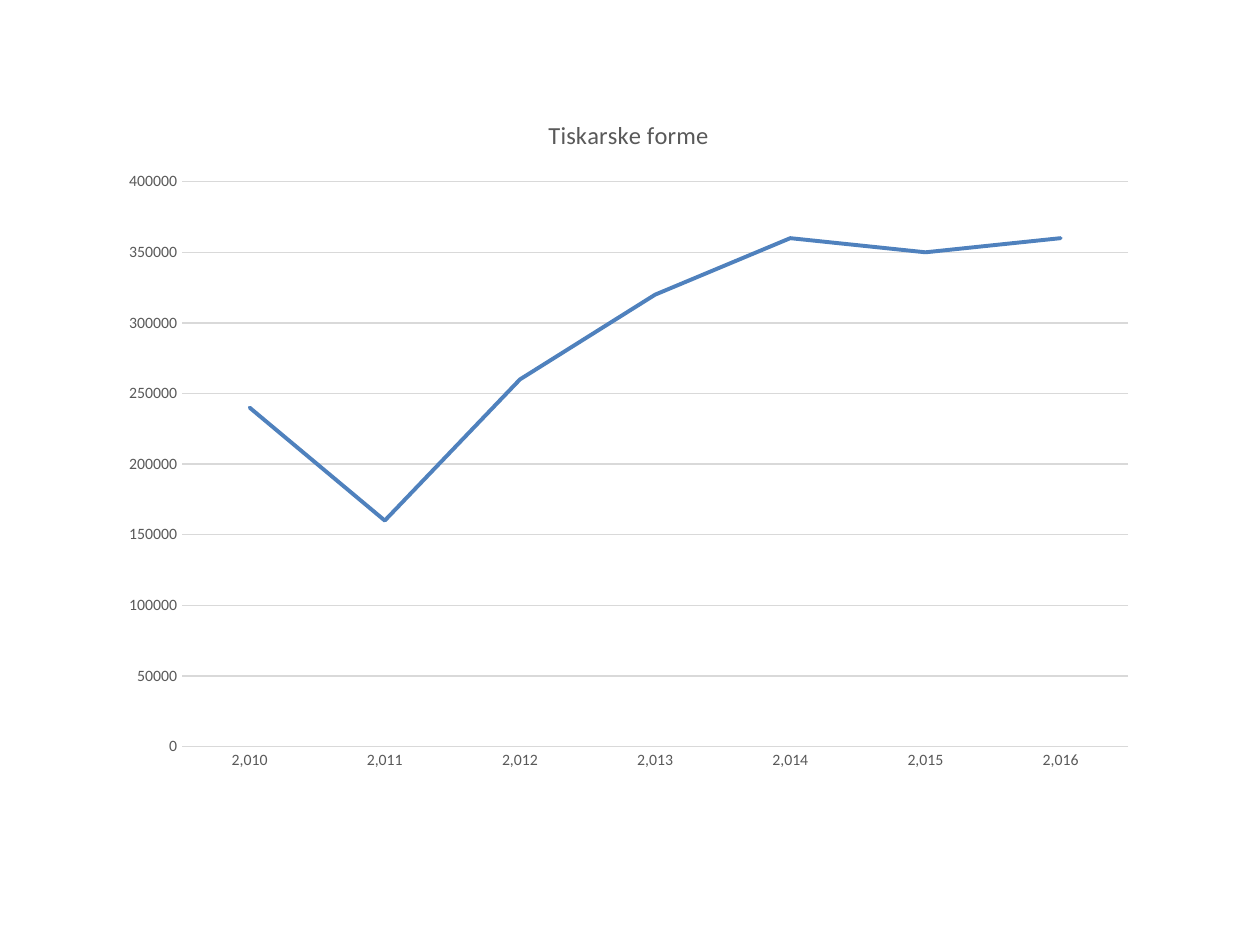
"""Build a slide with a line chart of printing plates per year."""
from pptx import Presentation
from pptx.chart.data import CategoryChartData
from pptx.dml.color import RGBColor
from pptx.enum import chart as ch
from pptx.util import Inches, Pt

TITLE = "Tiskarske forme"
PLATES = {
    "2,010": 240000,
    "2,011": 160000,
    "2,012": 260000,
    "2,013": 320000,
    "2,014": 360000,
    "2,015": 350000,
    "2,016": 360000,
}
GREY, GRID, BLUE = "595959", "D9D9D9", "4F81BD"


def rgb(color):
    return RGBColor.from_string(color)


def set_font(font, size, color=GREY):
    font.name, font.size, font.bold = "Calibri", Pt(size), False
    font.color.rgb = rgb(color)


def set_line(line, color, width):
    line.color.rgb = rgb(color)
    line.width = Pt(width)


def add_title(chart, content, size, color=GREY):
    chart.has_title = True
    chart.chart_title.include_in_layout = False
    p = chart.chart_title.text_frame.paragraphs[0]
    r = p.add_run()
    r.text = content
    set_font(r.font, size, color)


def style_axis(axis):
    axis.major_tick_mark = axis.minor_tick_mark = ch.XL_TICK_MARK.NONE
    set_font(axis.tick_labels.font, 9)


def add_line_chart(s):
    data = CategoryChartData(number_format="0")
    data.categories = list(PLATES)
    data.add_series(TITLE, list(PLATES.values()))
    chart = s.shapes.add_chart(
        ch.XL_CHART_TYPE.LINE, Inches(0.86), Inches(0.74),
        Inches(8.26), Inches(5.48), data).chart
    set_font(chart.font, 10, "000000")
    chart.has_legend = False
    add_title(chart, TITLE, 14)

    years, counts = chart.category_axis, chart.value_axis
    style_axis(years)
    style_axis(counts)
    set_line(years.format.line, GRID, 0.75)
    counts.format.line.fill.background()
    set_line(counts.major_gridlines.format.line, GRID, 0.75)
    counts.minimum_scale, counts.maximum_scale = 0, 400000
    counts.major_unit = 50000
    counts.tick_labels.number_format = "0"
    counts.tick_labels.number_format_is_linked = False

    plot = chart.plots[0]
    plot.vary_by_categories = False
    series = plot.series[0]
    series.smooth = False
    series.marker.style = ch.XL_MARKER_STYLE.NONE
    set_line(series.format.line, BLUE, 2.25)
    series.format.line._get_or_add_ln().set("cap", "rnd")


def main():
    prs = Presentation()
    prs.slide_width, prs.slide_height = Inches(10), Inches(7.5)
    add_line_chart(prs.slides.add_slide(prs.slide_layouts[6]))
    prs.save("out.pptx")


if __name__ == "__main__":
    main()
